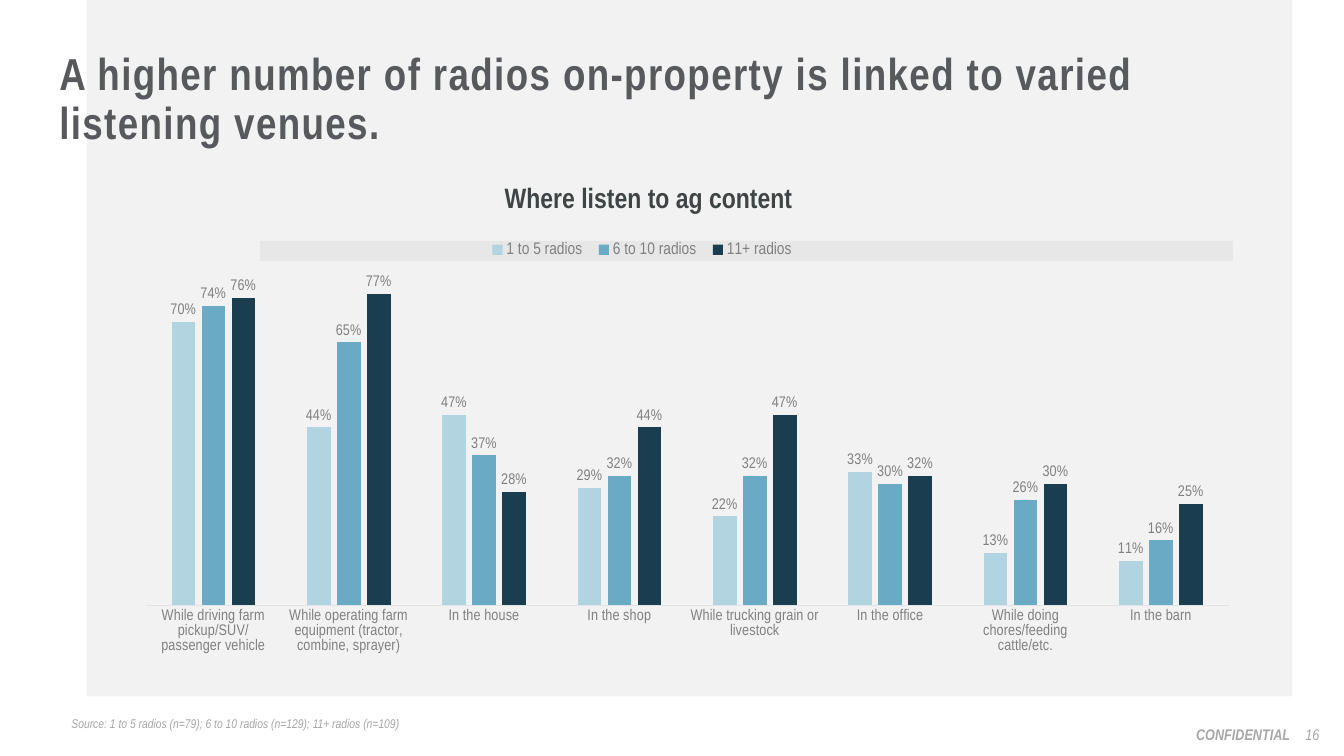
from dataclasses import dataclass
from typing import Optional

import lxml.etree
import pptx
import pptx.chart.data
import pptx.dml.color
import pptx.enum.chart
import pptx.enum.shapes
import pptx.enum.text
import pptx.oxml
import pptx.oxml.ns
import pptx.util

Pt = pptx.util.Pt
qn = pptx.oxml.ns.qn
FONT = "Arial Narrow"
COLORS = {
    "panel": "BFBFBF", "title": "57595C", "heading": "3F4444",
    "label": "808080", "muted": "A6A6A6", "axis": "E1E4E4",
    "white": "FFFFFF",
    "low": "B2D3E0", "mid": "6AAAC5", "high": "1A3D4F",
}


@dataclass
class Box:
    left: float
    top: float
    width: float
    height: float

    def lengths(self) -> tuple:
        return Pt(self.left), Pt(self.top), Pt(self.width), Pt(self.height)


@dataclass
class Label:
    text: str
    box: Box
    size: float
    color: str
    bold: bool = False
    italic: bool = False
    align: str = "LEFT"
    anchor: str = "TOP"
    line_spacing: Optional[float] = None
    tracking: float = 0
    outline: Optional[str] = None


@dataclass
class Series:
    name: str
    color: str
    percents: list


PANELS = [Box(61.9, 0, 861.1, 497.5), Box(185.8, 172.1, 694.8, 14.4)]

LABELS = [
    Label("CONFIDENTIAL", Box(823, 514.1, 105.8, 20.9), 11, "muted",
          bold=True, italic=True, align="RIGHT"),
    Label("16", Box(923, 510.5, 28.8, 28.8), 11, "muted",
          italic=True, align="CENTER", anchor="MIDDLE"),
    Label("Source: 1 to 5 radios (n=79); 6 to 10 radios (n=129); 11+ radios (n=109)",
          Box(43.9, 507.6, 615.6, 18), 9, "muted",
          italic=True, anchor="MIDDLE", outline="white"),
    Label("A higher number of radios on-property is linked to varied listening venues.",
          Box(35.3, 33.8, 873.4, 67), 32, "title",
          bold=True, line_spacing=0.9, tracking=1),
    Label("Where listen to ag content", Box(170.6, 125.3, 585.4, 31.7), 20,
          "heading", bold=True, align="CENTER"),
]

CHART_BOX = Box(35.3, 125.3, 882, 366.5)
VENUES = [
    "While driving farm pickup/SUV/passenger vehicle",
    "While operating farm equipment (tractor, combine, sprayer)",
    "In the house", "In the shop", "While trucking grain or livestock",
    "In the office", "While doing chores/feeding cattle/etc.", "In the barn",
]
SERIES = [
    Series("1 to 5 radios", "low", [70, 44, 47, 29, 22, 33, 13, 11]),
    Series("6 to 10 radios", "mid", [74, 65, 37, 32, 32, 30, 26, 16]),
    Series("11+ radios", "high", [76, 77, 28, 44, 47, 32, 30, 25]),
]


def rgb(name: str) -> pptx.dml.color.RGBColor:
    return pptx.dml.color.RGBColor.from_string(COLORS[name])


def set_font(font, size: float, color: str) -> None:
    font.name = FONT
    font.size = Pt(size)
    font.color.rgb = rgb(color)


def add_panel(slide, box: Box) -> None:
    s = slide.shapes.add_shape(pptx.enum.shapes.MSO_SHAPE.RECTANGLE, *box.lengths())
    s.shadow.inherit = False
    s.line.fill.background()
    s.fill.solid()
    s.fill.fore_color.rgb = rgb("panel")
    color = s.fill._xPr.find(".//" + qn("a:srgbClr"))
    lxml.etree.SubElement(color, qn("a:alpha"), val="20000")


def add_label(slide, label: Label) -> None:
    s = slide.shapes.add_textbox(*label.box.lengths())
    if label.outline:
        s.line.color.rgb = rgb(label.outline)
        s.line.width = Pt(1.5)
    tf = s.text_frame
    tf.word_wrap = True
    tf.vertical_anchor = pptx.enum.text.MSO_ANCHOR[label.anchor]
    p = tf.paragraphs[0]
    p.alignment = pptx.enum.text.PP_ALIGN[label.align]
    if label.line_spacing:
        p.line_spacing = label.line_spacing
    set_font(p.font, label.size, label.color)
    p.font.bold = label.bold
    p.font.italic = label.italic
    r = p.add_run()
    r.text = label.text
    if label.tracking:
        r.font._element.set("spc", str(round(label.tracking * 100)))


def set_layout(parent, before: str, x: float, y: float, w: float, h: float,
               inner: bool = False) -> None:
    """Place a chart part by fractions of the chart area."""
    for old in parent.findall(qn("c:layout")):
        parent.remove(old)
    layout = lxml.etree.Element(qn("c:layout"))
    manual = lxml.etree.SubElement(layout, qn("c:manualLayout"))
    values = {"layoutTarget": "inner"} if inner else {}
    values.update(xMode="edge", yMode="edge", x=x, y=y, w=w, h=h)
    for tag, value in values.items():
        lxml.etree.SubElement(manual, qn("c:" + tag), val=str(value))
    parent.find(qn(before)).addprevious(layout)


def add_venue_chart(slide) -> None:
    data = pptx.chart.data.CategoryChartData(number_format="0%")
    data.categories = VENUES
    for series in SERIES:
        data.add_series(series.name, [v / 100 for v in series.percents])
    enum = pptx.enum.chart
    chart = slide.shapes.add_chart(
        enum.XL_CHART_TYPE.COLUMN_CLUSTERED, *CHART_BOX.lengths(), data).chart
    set_font(chart.font, 12, "heading")
    chart.has_title = False

    # Columns and their value labels
    plot = chart.plots[0]
    plot.vary_by_categories = False
    plot.gap_width = 219
    plot.overlap = -27
    for column, series in zip(plot.series, SERIES):
        column.format.fill.solid()
        column.format.fill.fore_color.rgb = rgb(series.color)
        labels = column.data_labels
        labels.show_value = True
        labels.number_format = "0%"
        labels.number_format_is_linked = False
        labels.position = enum.XL_LABEL_POSITION.OUTSIDE_END
        set_font(labels.font, 11, "label")

    # Axes
    venues, share = chart.category_axis, chart.value_axis
    venues.major_tick_mark = enum.XL_TICK_MARK.NONE
    venues.format.line.color.rgb = rgb("axis")
    venues.format.line.width = Pt(0.75)
    set_font(venues.tick_labels.font, 11, "label")
    share.minimum_scale = 0
    share.maximum_scale = 1
    share.has_major_gridlines = False
    share.visible = False

    # Legend and plot placement
    chart.has_legend = True
    legend = chart.legend
    legend.position = enum.XL_LEGEND_POSITION.BOTTOM
    legend.include_in_layout = False
    set_font(legend.font, 12, "label")
    set_layout(legend._element, "c:overlay", 0.35, 0.12, 0.26, 0.05)
    plot_area = chart._chartSpace.find(".//" + qn("c:plotArea"))
    set_layout(plot_area, "c:barChart", 0.078, 0.049, 0.877, 0.789, inner=True)


def main() -> None:
    prs = pptx.Presentation()
    prs.slide_width, prs.slide_height = Pt(960), Pt(540)
    slide = prs.slides.add_slide(prs.slide_layouts[6])
    for box in PANELS:
        add_panel(slide, box)
    add_venue_chart(slide)
    for label in LABELS:
        add_label(slide, label)
    prs.save("out.pptx")


if __name__ == "__main__":
    main()
